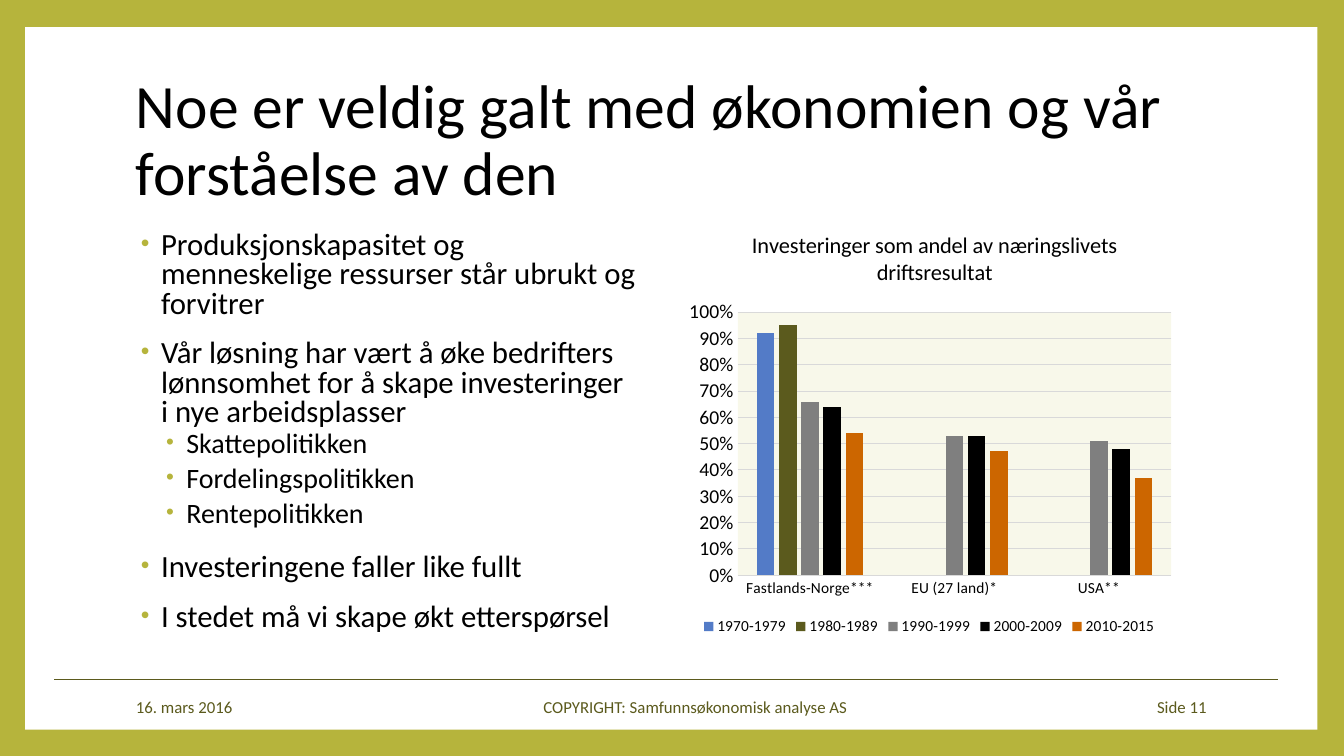
"""Build a slide on investment as a share of business operating profit."""
import pptx
import pptx.chart.data
import pptx.dml.color
import pptx.enum.chart
import pptx.enum.shapes
import pptx.enum.text
import pptx.oxml
import pptx.oxml.ns
import pptx.util

Pt = pptx.util.Pt
ALIGN = pptx.enum.text.PP_ALIGN
ANCHOR = pptx.enum.text.MSO_ANCHOR

TITLE = "Noe er veldig galt med økonomien og vår forståelse av den"
BULLETS = [
    (0, "Produksjonskapasitet og menneskelige ressurser står ubrukt og forvitrer"),
    (0, "Vår løsning har vært å øke bedrifters lønnsomhet for å skape investeringer i nye arbeidsplasser"),
    (1, "Skattepolitikken"),
    (1, "Fordelingspolitikken"),
    (1, "Rentepolitikken"),
    (0, "Investeringene faller like fullt"),
    (0, "I stedet må vi skape økt etterspørsel"),
]
FOOTERS = [
    ("16. mars 2016", 90, 183.6, ALIGN.LEFT),
    ("COPYRIGHT: Samfunnsøkonomisk analyse AS", 311, 371.5, ALIGN.CENTER),
    ("Side 11", 734.4, 134.6, ALIGN.RIGHT),
]
CHART_TITLE = "Investeringer som andel av næringslivets driftsresultat"
CATEGORIES = ["Fastlands-Norge***", "EU (27 land)*", "USA**"]
SERIES = [
    ("1970-1979", "537BC7", (0.92, None, None)),
    ("1980-1989", "5B5A1D", (0.95, None, None)),
    ("1990-1999", "7F7F7F", (0.66, 0.53, 0.51)),
    ("2000-2009", "000000", (0.64, 0.53, 0.48)),
    ("2010-2015", "CC6600", (0.54, 0.47, 0.37)),
]
THEME = {
    "font": "Calibri", "text": "000000", "accent": "B6B43C", "dark": "5B5A1D",
    "panel": "FFFFFF", "grid": "D9D9D9", "plot": "F8F8EA",
    "title": 44, "body": (22, 20), "footer": 12,
    "chart_title": 16, "values": 14, "labels": 11,
}
BULLET_SPACING = ({"space_before": Pt(14)}, {"space_before": Pt(2), "space_after": Pt(4)})


def color(name):
    return pptx.dml.color.RGBColor.from_string(THEME.get(name, name))


def apply(target, values):
    for name, value in values.items():
        setattr(target, name, value)


def style_font(font, size, color_name="text"):
    apply(font, {"name": THEME["font"], "size": Pt(size), "bold": False})
    font.color.rgb = color(color_name)


def style_line(line, color_name, width):
    line.color.rgb = color(color_name)
    line.width = Pt(width)


def add_text(slide, box, paragraphs, anchor=ANCHOR.MIDDLE):
    frame = slide.shapes.add_textbox(*map(Pt, box)).text_frame
    apply(frame, {"word_wrap": True, "vertical_anchor": anchor})
    for index, (text, size, color_name, formats, level) in enumerate(paragraphs):
        paragraph = frame.add_paragraph() if index else frame.paragraphs[0]
        apply(paragraph, formats)
        if level is not None:
            add_bullet(paragraph, level)
        run = paragraph.add_run()
        run.text = text
        style_font(run.font, size, color_name)


def add_bullet(paragraph, level):
    properties = paragraph._p.get_or_add_pPr()
    properties.set("marL", str(Pt(18 * (level + 1))))
    properties.set("indent", str(Pt(-14.4)))
    namespace = pptx.oxml.ns.nsdecls("a")
    for markup in (
        f'<a:buClr {namespace}><a:srgbClr val="{THEME["accent"]}"/></a:buClr>',
        f'<a:buSzPct {namespace} val="80000"/>',
        f'<a:buFont {namespace} typeface="Arial"/>',
        f'<a:buChar {namespace} char="•"/>',
    ):
        properties.append(pptx.oxml.parse_xml(markup))


def set_layout(parent, index, inner, **fractions):
    for old in parent.findall(pptx.oxml.ns.qn("c:layout")):
        parent.remove(old)
    target = '<c:layoutTarget val="inner"/>' if inner else ""
    modes = '<c:xMode val="edge"/><c:yMode val="edge"/>'
    values = "".join(f'<c:{key} val="{value}"/>' for key, value in fractions.items())
    parent.insert(index, pptx.oxml.parse_xml(
        f'<c:layout {pptx.oxml.ns.nsdecls("c")}><c:manualLayout>'
        f"{target}{modes}{values}</c:manualLayout></c:layout>"))


def add_investment_chart(slide):
    data = pptx.chart.data.CategoryChartData(number_format="0%")
    data.categories = CATEGORIES
    for name, _, values in SERIES:
        data.add_series(name, values)
    chart = slide.shapes.add_chart(
        pptx.enum.chart.XL_CHART_TYPE.COLUMN_CLUSTERED,
        *map(Pt, (483.8, 149, 360, 308.2)), data).chart
    style_font(chart.font, THEME["labels"])

    apply(chart, {"has_title": True, "has_legend": True})
    title_frame = chart.chart_title.text_frame
    title_frame.text = CHART_TITLE
    style_font(title_frame.paragraphs[0].runs[0].font, THEME["chart_title"])
    set_layout(chart.chart_title._element, 1, False, x=0.14, y=0.04)
    apply(chart.legend, {"position": pptx.enum.chart.XL_LEGEND_POSITION.BOTTOM,
                         "include_in_layout": False})
    style_font(chart.legend.font, THEME["labels"])

    plot = chart.plots[0]
    apply(plot, {"gap_width": 219, "overlap": -27, "vary_by_categories": False})
    for series, (_, fill, _) in zip(plot.series, SERIES):
        series.format.fill.solid()
        series.format.fill.fore_color.rgb = color(fill)

    no_tick = pptx.enum.chart.XL_TICK_MARK.NONE
    for axis, size in ((chart.category_axis, THEME["labels"]),
                       (chart.value_axis, THEME["values"])):
        apply(axis, {"major_tick_mark": no_tick, "minor_tick_mark": no_tick})
        style_font(axis.tick_labels.font, size)
    style_line(chart.category_axis.format.line, "grid", 0.75)
    value_axis = chart.value_axis
    apply(value_axis, {"minimum_scale": 0, "maximum_scale": 1, "major_unit": 0.1})
    apply(value_axis.tick_labels, {"number_format": "0%", "number_format_is_linked": False})
    value_axis.format.line.fill.background()
    style_line(value_axis.major_gridlines.format.line, "grid", 0.75)

    plot_area = chart._chartSpace.chart.plotArea
    set_layout(plot_area, 0, True, x=0.12, y=0.24, w=0.86, h=0.61)
    plot_area.append(pptx.oxml.parse_xml(
        f'<c:spPr {pptx.oxml.ns.nsdecls("c", "a")}><a:solidFill>'
        f'<a:srgbClr val="{THEME["plot"]}"/></a:solidFill></c:spPr>'))


def main():
    presentation = pptx.Presentation()
    apply(presentation, {"slide_width": Pt(960), "slide_height": Pt(540)})
    slide = presentation.slides.add_slide(presentation.slide_layouts[6])
    slide.background.fill.solid()
    slide.background.fill.fore_color.rgb = color("accent")

    panel = slide.shapes.add_shape(
        pptx.enum.shapes.MSO_SHAPE.RECTANGLE, *map(Pt, (18, 19.4, 923, 501.8)))
    panel.shadow.inherit = False
    panel.fill.solid()
    panel.fill.fore_color.rgb = color("panel")
    panel.line.fill.background()

    rule = slide.shapes.add_connector(
        pptx.enum.shapes.MSO_CONNECTOR.STRAIGHT, *map(Pt, (38.9, 485.3, 913, 485.3)))
    style_line(rule.line, "dark", 0.5)
    rule._element.spPr.append(
        pptx.oxml.parse_xml(f'<a:effectLst {pptx.oxml.ns.nsdecls("a")}/>'))

    add_text(slide, (90, 48.2, 788.4, 106.6),
             [(TITLE, THEME["title"], "text", {"line_spacing": 0.9}, None)])
    bullets = []
    for index, (level, text) in enumerate(BULLETS):
        formats = {"level": level, "line_spacing": 0.8, **BULLET_SPACING[level]}
        if index == 0:
            formats["space_before"] = Pt(0)
        bullets.append((text, THEME["body"][level], "text", formats, level))
    add_text(slide, (90, 162, 371.5, 318.2), bullets, ANCHOR.TOP)
    add_investment_chart(slide)
    for text, left, width, alignment in FOOTERS:
        add_text(slide, (left, 490.3, width, 28.8),
                 [(text, THEME["footer"], "dark", {"alignment": alignment}, None)])
    presentation.save("out.pptx")


if __name__ == "__main__":
    main()
